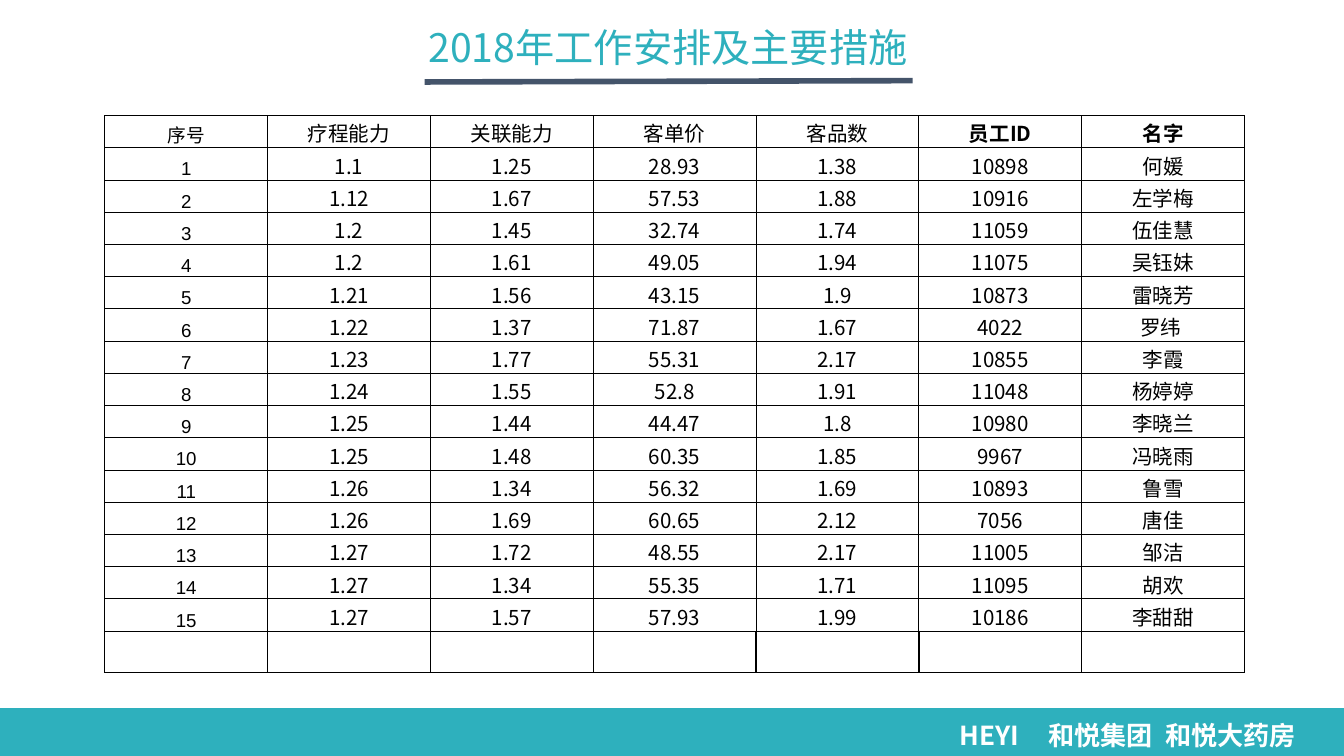
from dataclasses import dataclass

from lxml import etree
from pptx import Presentation
from pptx.dml.color import RGBColor
from pptx.enum import shapes, text
from pptx.oxml import ns
from pptx.util import Inches, Pt

CJK, LATIN = "Noto Sans CJK SC", "Arial"
TEAL, SLATE, WHITE, BLACK = "2EB0BD", "44546A", "FFFFFF", "000000"


@dataclass
class Style:
    size: float
    color: str = BLACK
    font: str = CJK
    bold: bool = False


@dataclass
class Block:
    kind: shapes.MSO_SHAPE
    left: float
    top: float
    width: float
    height: float
    color: str


BLOCKS = [
    Block(shapes.MSO_SHAPE.RECTANGLE, 0, 5.27, 10, 0.37, TEAL),
    Block(shapes.MSO_SHAPE.ROUNDED_RECTANGLE, 1.16, 0.86, 7.76, 4.15, WHITE),
]

HEADERS = ["序号", "疗程能力", "关联能力", "客单价", "客品数", "员工ID", "名字"]
STAFF = [
    ("1.1", "1.25", "28.93", "1.38", "10898", "何媛"),
    ("1.12", "1.67", "57.53", "1.88", "10916", "左学梅"),
    ("1.2", "1.45", "32.74", "1.74", "11059", "伍佳慧"),
    ("1.2", "1.61", "49.05", "1.94", "11075", "吴钰妹"),
    ("1.21", "1.56", "43.15", "1.9", "10873", "雷晓芳"),
    ("1.22", "1.37", "71.87", "1.67", "4022", "罗纬 "),
    ("1.23", "1.77", "55.31", "2.17", "10855", "李霞"),
    ("1.24", "1.55", "52.8", "1.91", "11048", "杨婷婷"),
    ("1.25", "1.44", "44.47", "1.8", "10980", "李晓兰"),
    ("1.25", "1.48", "60.35", "1.85", "9967", "冯晓雨"),
    ("1.26", "1.34", "56.32", "1.69", "10893", "鲁雪"),
    ("1.26", "1.69", "60.65", "2.12", "7056", "唐佳"),
    ("1.27", "1.72", "48.55", "2.17", "11005", "邹洁"),
    ("1.27", "1.34", "55.35", "1.71", "11095", "胡欢"),
    ("1.27", "1.57", "57.93", "1.99", "10186", "李甜甜"),
]
ROW_H, LAST_ROW_H = 0.24, 0.31


def rgb(color: str) -> RGBColor:
    return RGBColor.from_string(color)


def write(p, words: str, style: Style, align=text.PP_ALIGN.CENTER) -> None:
    p.text = words
    p.alignment = align
    f = p.font
    f.size, f.bold, f.name = Pt(style.size), style.bold, style.font
    f.color.rgb = rgb(style.color)
    # East Asian glyphs need their own typeface entry
    props = p._p.pPr.find(ns.qn("a:defRPr"))
    etree.SubElement(props, ns.qn("a:ea"), typeface=style.font)


def set_margins(frame, x: float, y: float) -> None:
    frame.margin_left = frame.margin_right = Inches(x)
    frame.margin_top = frame.margin_bottom = Inches(y)


def add_block(s, block: Block) -> None:
    sp = s.shapes.add_shape(block.kind, Inches(block.left), Inches(block.top),
                            Inches(block.width), Inches(block.height))
    sp.shadow.inherit = False
    sp.fill.solid()
    sp.fill.fore_color.rgb = rgb(block.color)
    sp.line.fill.background()


def add_title(s) -> None:
    sp = s.shapes.title
    sp.left, sp.top, sp.width, sp.height = map(Inches, (1.69, 0.12, 6.56, 0.5))
    tf = sp.text_frame
    tf.auto_size = text.MSO_AUTO_SIZE.NONE
    tf.vertical_anchor = text.MSO_ANCHOR.MIDDLE
    set_margins(tf, 0, 0.05)
    write(tf.paragraphs[0], "2018年工作安排及主要措施", Style(21, TEAL))
    tf.paragraphs[0].line_spacing = 0.9

    rule = s.shapes.add_connector(shapes.MSO_CONNECTOR.STRAIGHT, Inches(3.16),
                                  Inches(0.61), Inches(6.79), Inches(0.6))
    rule.line.color.rgb = rgb(SLATE)
    rule.line.width = Pt(3)
    etree.SubElement(rule._element.spPr, ns.qn("a:effectLst"))


def add_footer(s) -> None:
    sp = s.shapes.add_textbox(Inches(7.07), Inches(5.31), Inches(3.01), Inches(0.31))
    tf = sp.text_frame
    tf.word_wrap = True
    set_margins(tf, 0.07, 0.04)
    p = tf.paragraphs[0]
    write(p, "HEYI\t和悦集团\t和悦大药房", Style(14, WHITE, bold=True),
          text.PP_ALIGN.LEFT)
    # Tab stops space out the three names
    tabs = etree.Element(ns.qn("a:tabLst"))
    for stop in (0.66, 1.53):
        etree.SubElement(tabs, ns.qn("a:tab"), pos=str(Inches(stop)), algn="l")
    p._p.pPr.find(ns.qn("a:defRPr")).addprevious(tabs)


def set_borders(cell, widths: dict[str, float]) -> None:
    props = cell._tc.get_or_add_tcPr()
    for i, (side, width) in enumerate(widths.items()):
        ln = etree.Element(ns.qn(f"a:ln{side}"), w=str(Pt(width)))
        fill = etree.SubElement(ln, ns.qn("a:solidFill"))
        etree.SubElement(fill, ns.qn("a:srgbClr"), val=BLACK)
        props.insert(i, ln)


def cell_style(row: int, col: int) -> Style:
    if col == 0:
        return Style(10, font=CJK if row == 0 else LATIN)
    return Style(11, bold=row == 0 and col >= 5)


def add_staff_table(s) -> None:
    rows = [HEADERS, *((str(i), *person) for i, person in enumerate(STAFF, 1)),
            [""] * len(HEADERS)]
    last = len(rows) - 1
    table = s.shapes.add_table(len(rows), len(HEADERS), Inches(0.78), Inches(0.86),
                               Inches(8.48), Inches(4.15)).table
    table.first_row = table.horz_banding = False
    for i, row in enumerate(rows):
        table.rows[i].height = Inches(LAST_ROW_H if i == last else ROW_H)
        side = 0.75 if i == last else 0.5
        for j, words in enumerate(row):
            cell = table.cell(i, j)
            set_margins(cell, 0, 0)
            cell.vertical_anchor = text.MSO_ANCHOR.BOTTOM
            cell.fill.background()
            set_borders(cell, {"L": side, "R": side, "T": 0.5, "B": side})
            if words:
                write(cell.text_frame.paragraphs[0], words, cell_style(i, j))


def main() -> None:
    prs = Presentation()
    prs.slide_width = Inches(10)
    prs.slide_height = prs.slide_width * 9 // 16
    s = prs.slides.add_slide(prs.slide_layouts[5])  # title only
    add_title(s)
    for block in BLOCKS:
        add_block(s, block)
    add_footer(s)
    add_staff_table(s)
    prs.save("out.pptx")


if __name__ == "__main__":
    main()
